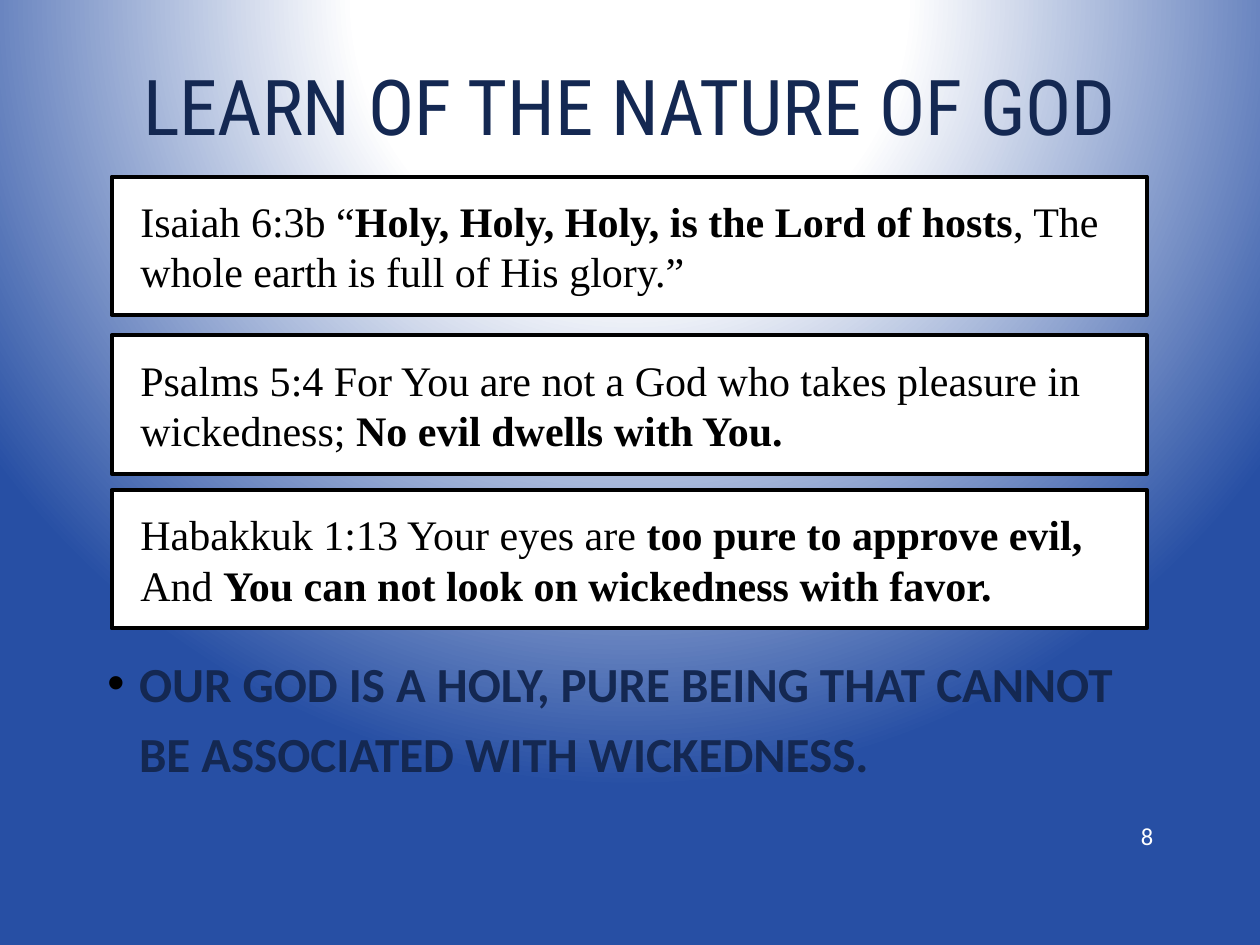
"""Build the slide on the nature of God with three framed verses."""
from dataclasses import dataclass

from lxml.etree import SubElement
from pptx import Presentation
from pptx.dml.color import RGBColor
from pptx.enum.shapes import MSO_SHAPE as Shape
from pptx.enum.text import MSO_ANCHOR as Anchor, MSO_AUTO_SIZE as AutoSize, PP_ALIGN as Align
from pptx.oxml import parse_xml
from pptx.oxml.ns import nsdecls, qn
from pptx.util import Cm, Pt

NAVY, BLUE, WHITE, BLACK = "142852", "274FA4", "FFFFFF", "000000"
VERSE_LEFT, VERSE_WIDTH, VERSE_HEIGHT = 2.25, 20.87, 2.79


@dataclass
class Verse:
    top: float
    runs: list[tuple[str, bool]]


VERSES = [
    Verse(3.56, [("Isaiah 6:3b “", False),
                 ("Holy, Holy, Holy, is the Lord of hosts", True),
                 (", The whole earth is full of His glory.”", False)]),
    Verse(6.76, [("Psalms 5:4 For You are not a God who takes pleasure in wickedness; ", False),
                 ("No evil dwells with You.", True)]),
    Verse(9.88, [("Habakkuk 1:13 Your eyes are ", False),
                 ("too pure to approve evil,", True),
                 (" And ", False),
                 ("You can not look on wickedness with favor.", True)]),
]


def rgb(color: str) -> RGBColor:
    return RGBColor.from_string(color)


def place(sp, left: float, top: float, width: float, height: float) -> None:
    sp.left, sp.top, sp.width, sp.height = Cm(left), Cm(top), Cm(width), Cm(height)


def style(r, name: str, size: float, color: str, bold: bool = False, shadow: bool = False) -> None:
    r.font.size, r.font.bold = Pt(size), bold
    r.font.color.rgb = rgb(color)
    if shadow:
        r.font._element.append(parse_xml(
            f'<a:effectLst {nsdecls("a")}><a:outerShdw blurRad="38100" dist="38100" dir="2700000">'
            '<a:srgbClr val="000000"><a:alpha val="43000"/></a:srgbClr></a:outerShdw></a:effectLst>'))
    r.font.name = name


def indent(p, margin: float, first: float = 0) -> None:
    pPr = p._p.get_or_add_pPr()
    pPr.set("marL", str(Cm(margin)))
    pPr.set("indent", str(Cm(first)))


def paint_background(s) -> None:
    fill = s.background.fill
    fill.gradient()
    grad = fill._xPr.find(qn("a:gradFill"))
    for child in list(grad):
        grad.remove(child)
    stops = SubElement(grad, qn("a:gsLst"))
    for pos, color in ((0, WHITE), (35, WHITE), (100, BLUE)):
        stop = SubElement(stops, qn("a:gs"), pos=str(pos * 1000))
        SubElement(stop, qn("a:srgbClr"), val=color)
    circle = SubElement(grad, qn("a:path"))
    circle.set("path", "circle")
    SubElement(circle, qn("a:fillToRect"), l="50000", t="-80000", r="50000", b="180000")


def add_title(s) -> None:
    sp = s.shapes.title
    place(sp, 1.91, 0, 21.59, 4.45)
    tf = sp.text_frame
    tf.text = "LEARN OF THE NATURE OF GOD"
    tf.auto_size, tf.vertical_anchor = AutoSize.NONE, Anchor.MIDDLE
    p = tf.paragraphs[0]
    p.alignment, p.line_spacing = Align.CENTER, 0.9
    r = p.runs[0]
    style(r, "Roboto Condensed", 44, NAVY, shadow=True)
    r.font._element.insert(0, parse_xml(
        f'<a:ln {nsdecls("a")} w="{Pt(0.75)}"><a:solidFill>'
        f'<a:srgbClr val="{WHITE}"/></a:solidFill></a:ln>'))


def add_conclusion(s) -> None:
    sp = s.placeholders[1]
    place(sp, 1.91, 12.8, 21.59, 5.03)
    tf = sp.text_frame
    tf.text = "OUR GOD IS A HOLY, PURE BEING THAT CANNOT BE ASSOCIATED WITH WICKEDNESS."
    tf.auto_size = AutoSize.NONE
    p = tf.paragraphs[0]
    indent(p, 0.64, -0.64)
    pPr = p._p.get_or_add_pPr()
    SubElement(SubElement(pPr, qn("a:buClr")), qn("a:srgbClr"), val=BLACK)
    SubElement(pPr, qn("a:buFont"), typeface="Arial")
    SubElement(pPr, qn("a:buChar"), char="•")
    p.line_spacing, p.space_before = 1.2, Pt(0)
    style(p.runs[0], "Calibri", 28, NAVY, bold=True, shadow=True)


def add_verse(s, verse: Verse) -> None:
    sp = s.shapes.add_shape(Shape.RECTANGLE, Cm(VERSE_LEFT), Cm(verse.top),
                            Cm(VERSE_WIDTH), Cm(VERSE_HEIGHT))
    sp.shadow.inherit = False
    sp.fill.solid()
    sp.fill.fore_color.rgb = rgb(WHITE)
    sp.line.color.rgb, sp.line.width = rgb(BLACK), Pt(2.25)
    tf = sp.text_frame
    tf.word_wrap, tf.vertical_anchor = True, Anchor.MIDDLE
    p = tf.paragraphs[0]
    p.alignment = Align.LEFT
    indent(p, 0.33)
    for text, bold in verse.runs:
        r = p.add_run()
        r.text = text
        style(r, "Times New Roman", 24, BLACK, bold)


def add_page_number(s, number: int) -> None:
    sp = s.shapes.add_textbox(Cm(21.9), Cm(16.33), Cm(1.6), Cm(1.02))
    tf = sp.text_frame
    tf.text = str(number)
    tf.word_wrap, tf.vertical_anchor = True, Anchor.MIDDLE
    p = tf.paragraphs[0]
    p.alignment = Align.RIGHT
    style(p.runs[0], "Calibri", 14, WHITE)


def main() -> None:
    prs = Presentation()
    prs.slide_width, prs.slide_height = Cm(25.4), Cm(19.05)
    s = prs.slides.add_slide(prs.slide_layouts[1])
    paint_background(s)
    add_title(s)
    add_conclusion(s)
    for verse in VERSES:
        add_verse(s, verse)
    add_page_number(s, 8)
    prs.save("out.pptx")


if __name__ == "__main__":
    main()
